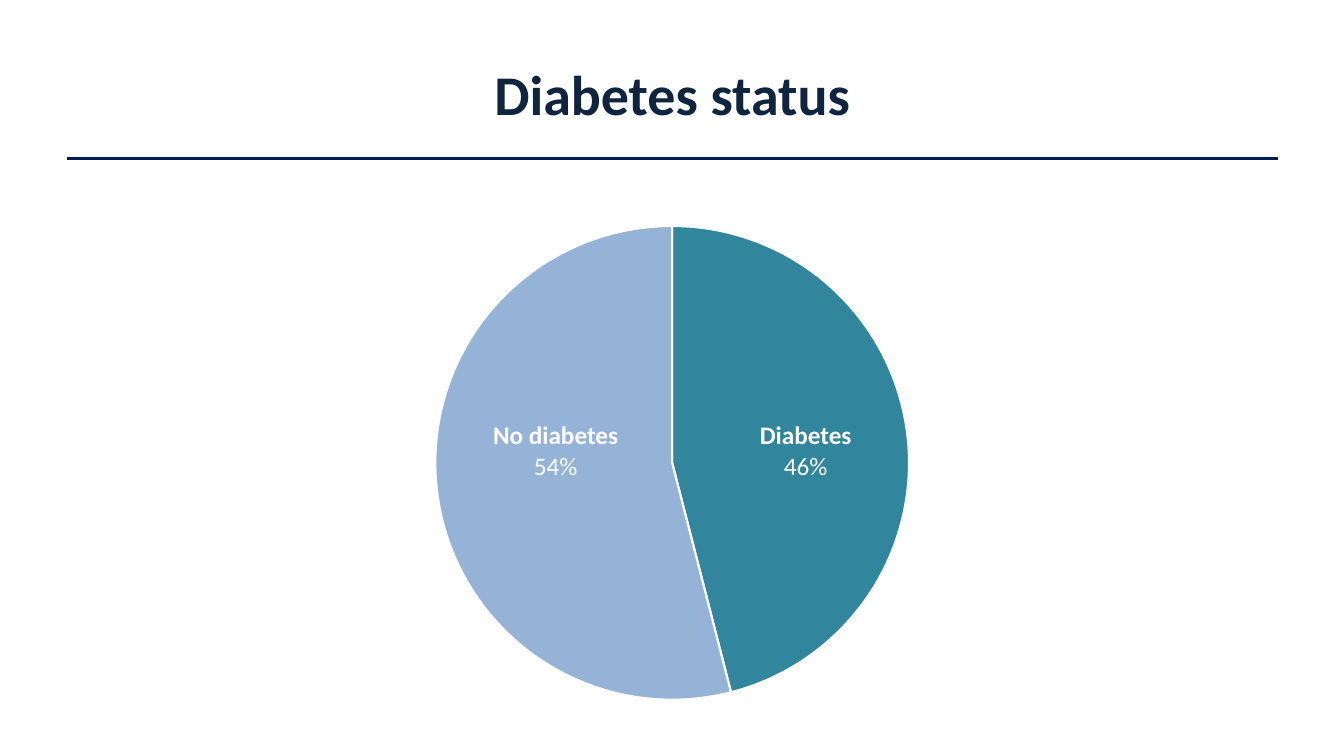
"""Build the diabetes status slide with a labelled pie chart."""
import dataclasses

import lxml.etree
import pptx
import pptx.chart.data
import pptx.dml.color
import pptx.enum.chart
import pptx.enum.shapes
import pptx.enum.text
import pptx.oxml
import pptx.oxml.ns
import pptx.util

Cm = pptx.util.Cm
Pt = pptx.util.Pt
RGB = pptx.dml.color.RGBColor.from_string


@dataclasses.dataclass(frozen=True)
class Theme:
    """Colours, font and sizes of the slide."""

    font: str = "Calibri"
    title: str = "0F243E"
    rule: str = "001C54"
    diabetes: str = "31859C"
    no_diabetes: str = "95B3D7"
    white: str = "FFFFFF"
    black: str = "000000"
    title_size: int = 40
    label_size: int = 18
    chart_size: int = 10


THEME = Theme()


def format_font(font, size, colour, bold=False):
    """Apply the theme font with a size, colour and weight."""
    formats = {"name": THEME.font, "size": Pt(size), "bold": bold}
    for name, value in formats.items():
        setattr(font, name, value)
    font.color.rgb = RGB(colour)


def add_text(page, place, lines, size, colour):
    """Add a centred text box from (text, bold) lines."""
    frame = page.shapes.add_textbox(*map(Cm, place)).text_frame
    formats = {
        "word_wrap": True,
        "vertical_anchor": pptx.enum.text.MSO_ANCHOR.MIDDLE,
    }
    for name, value in formats.items():
        setattr(frame, name, value)
    for index, (text, bold) in enumerate(lines):
        para = frame.add_paragraph() if index else frame.paragraphs[0]
        para.alignment = pptx.enum.text.PP_ALIGN.CENTER
        span = para.add_run()
        span.text = text
        format_font(span.font, size, colour, bold)


def add_rule(page, left, right, top):
    """Add the horizontal line below the title."""
    rule = page.shapes.add_connector(
        pptx.enum.shapes.MSO_CONNECTOR.STRAIGHT, Cm(left), Cm(top), Cm(right), Cm(top)
    )
    rule.line.color.rgb = RGB(THEME.rule)
    rule.line.width = Pt(2.25)
    lxml.etree.SubElement(rule.element.spPr, pptx.oxml.ns.qn("a:effectLst"))


def set_plot_area(chart, fractions):
    """Fix the inner plot area as fractions of the chart frame."""
    modes = {"layoutTarget": "inner", "xMode": "edge", "yMode": "edge"}
    settings = "".join(
        f'<c:{name} val="{value}"/>' for name, value in (modes | fractions).items()
    )
    layout = pptx.oxml.parse_xml(
        f'<c:layout {pptx.oxml.ns.nsdecls("c")}>'
        f"<c:manualLayout>{settings}</c:manualLayout></c:layout>"
    )
    plot_area = chart.element.chart.plotArea
    for old in plot_area.findall(pptx.oxml.ns.qn("c:layout")):
        plot_area.remove(old)
    plot_area.insert(0, layout)


def add_pie(page, place, shares, colours):
    """Add a pie chart with one colour per slice."""
    data = pptx.chart.data.CategoryChartData()
    data.categories = [str(number + 1) for number in range(len(shares))]
    data.add_series("Series 1", shares)
    chart = page.shapes.add_chart(
        pptx.enum.chart.XL_CHART_TYPE.PIE, *map(Cm, place), data
    ).chart
    chart.has_legend = False
    chart.has_title = False
    format_font(chart.font, THEME.chart_size, THEME.black)
    plot = chart.plots[0]
    plot.vary_by_categories = True
    for index, colour in enumerate(colours):
        style = plot.series[0].points[index].format
        style.fill.solid()
        style.fill.fore_color.rgb = RGB(colour)
        style.line.color.rgb = RGB(THEME.white)
        style.line.width = Pt(1.5)
    set_plot_area(chart, {"x": 0.03, "y": 0.07, "w": 0.94, "h": 0.85})


def main():
    """Compose and save the slide."""
    deck = pptx.Presentation()
    deck.slide_width, deck.slide_height = Cm(33.87), Cm(19.05)
    page = deck.slides.add_slide(deck.slide_layouts[6])
    add_rule(page, 1.68, 32.2, 3.99)
    add_text(
        page,
        (1.7, 0.76, 30.48, 3.18),
        [("Diabetes status", True)],
        THEME.title_size,
        THEME.title,
    )
    add_pie(
        page, (10.59, 4.7, 12.7, 14.07), (46, 54), (THEME.diabetes, THEME.no_diabetes)
    )
    labels = [("No diabetes", "54%", 11.3), ("Diabetes", "46%", 17.6)]
    for name, share, left in labels:
        add_text(
            page,
            (left, 10.44, 5.41, 1.8),
            [(name, True), (share, False)],
            THEME.label_size,
            THEME.white,
        )
    deck.save("out.pptx")


if __name__ == "__main__":
    main()
